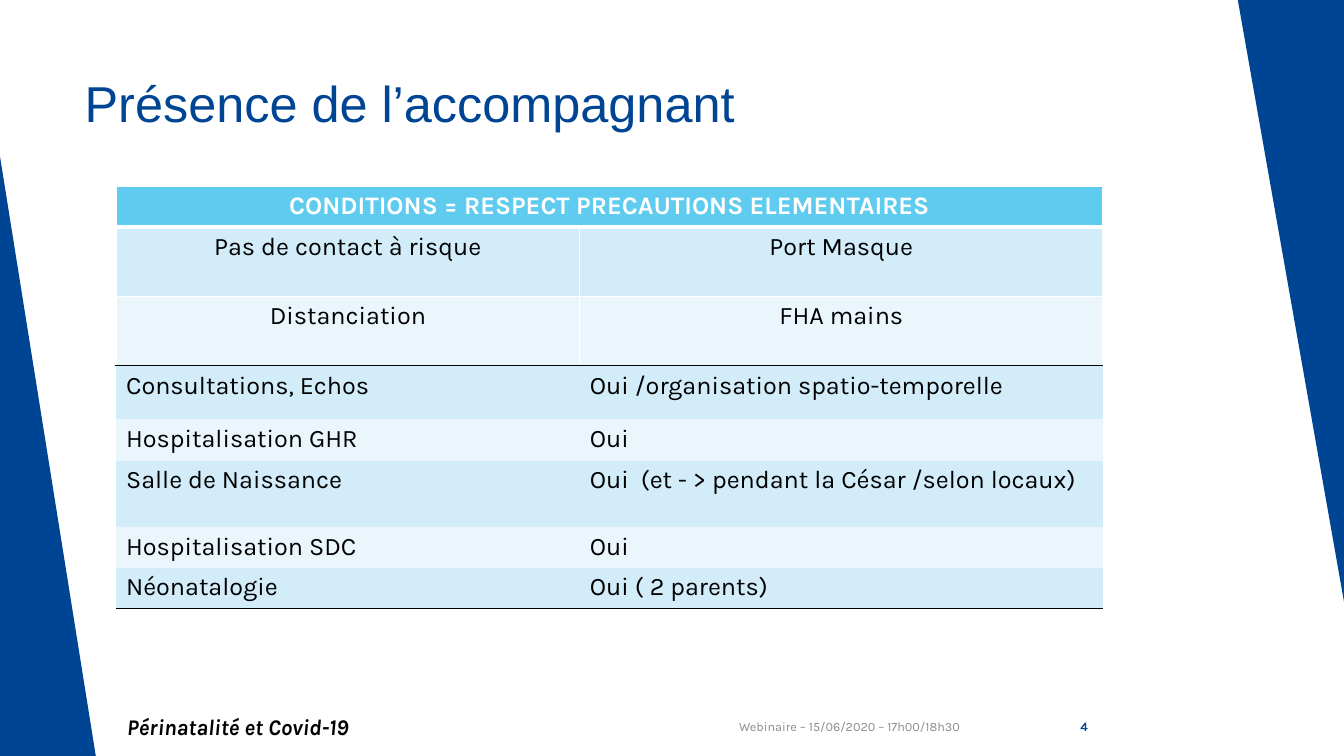
from dataclasses import dataclass

from lxml.etree import SubElement
from pptx import Presentation
from pptx.dml.color import RGBColor
from pptx.enum.shapes import MSO_SHAPE as Shape
from pptx.enum.text import MSO_ANCHOR as Anchor, PP_ALIGN as Align
from pptx.oxml.ns import qn
from pptx.util import Inches, Pt


@dataclass(frozen=True)
class Theme:
    """Colours, fonts and type sizes of the slide."""
    navy: str = "004494"
    sky: str = "5FCBEF"
    bands: tuple = ("EAF6FC", "D2ECF9")
    white: str = "FFFFFF"
    black: str = "000000"
    grey: str = "8C8C8C"
    heading_font: str = "Arial"
    body_font: str = "Karla"
    heading: int = 36
    body: int = 18
    event: int = 16
    small: int = 9


@dataclass(frozen=True)
class Box:
    """A region divided into 100 columns and 100 rows."""
    left: int
    top: int
    width: int
    height: int

    def region(self, column, row, columns, rows):
        """Return the region covering the given columns and rows."""
        return Box(int(self.left + self.width * column / 100),
                   int(self.top + self.height * row / 100),
                   int(self.width * columns / 100),
                   int(self.height * rows / 100))

    def frame(self):
        """Return left, top, width and height."""
        return self.left, self.top, self.width, self.height


THEME = Theme()
HEADER = "CONDITIONS = RESPECT PRECAUTIONS ELEMENTAIRES"
PRECAUTIONS = [
    ("Pas de contact à risque", "Port Masque"),
    ("Distanciation", "FHA mains"),
]
SERVICES = [
    ("Consultations, Echos", "Oui /organisation spatio-temporelle"),
    ("Hospitalisation GHR", "Oui"),
    ("Salle de Naissance", "Oui  (et - > pendant la César /selon locaux)"),
    ("Hospitalisation SDC", "Oui"),
    ("Néonatalogie", "Oui ( 2 parents)"),
]
COLUMN_SHARES = (47, 53)
ROW_SHARES = (9.55, 16.49, 16.49, 12.65, 9.8, 15.77, 9.67, 9.67)


def write_text(frame, text, size=THEME.body, color=THEME.black, font=THEME.body_font,
               bold=False, italic=False, align=Align.LEFT, anchor=Anchor.TOP):
    """Write one formatted paragraph into a text frame."""
    frame.word_wrap = True
    frame.vertical_anchor = anchor
    paragraph = frame.paragraphs[0]
    paragraph.alignment = align
    run = paragraph.add_run()
    run.text = text
    run.font.name, run.font.size = font, Pt(size)
    run.font.bold, run.font.italic = bold, italic
    run.font.color.rgb = RGBColor.from_string(color)


def set_border(cell, **sides):
    """Draw the sides L, R, T, B given as (colour, points), and clear the others."""
    properties = cell._tc.get_or_add_tcPr()
    for side in "LRTB":
        color, points = sides.get(side, (None, 0))
        line = SubElement(properties, qn(f"a:ln{side}"), w=str(Pt(points)))
        if color:
            fill = SubElement(line, qn("a:solidFill"))
            SubElement(fill, qn("a:srgbClr"), val=color)
        else:
            SubElement(line, qn("a:noFill"))


def add_side_bands(slide, box):
    """Place the two slanted bands on the edges of the box."""
    bands = [(box.region(0, 20.67, 7.13, 79.33), 0), (box.region(92.1, 0, 7.9, 79.6), 180)]
    for edge, rotation in bands:
        band = slide.shapes.add_shape(Shape.RIGHT_TRIANGLE, *edge.frame())
        band.rotation = rotation
        band.shadow.inherit = False
        band.fill.solid()
        band.fill.fore_color.rgb = RGBColor.from_string(THEME.navy)
        band.line.fill.background()


def add_title(slide, box):
    """Place the slide title in the box."""
    title = slide.shapes.title
    title.left, title.top, title.width, title.height = box.frame()
    write_text(title.text_frame, "Présence de l’accompagnant", size=THEME.heading,
               color=THEME.navy, font=THEME.heading_font)


def add_conditions_table(slide, box):
    """Fill the box with the precautions and the rule of each service."""
    rows = [(HEADER, ""), *PRECAUTIONS, *SERVICES]
    table = slide.shapes.add_table(len(rows), len(COLUMN_SHARES), *box.frame()).table
    table.first_row = table.horz_banding = False
    for column, share in zip(table.columns, COLUMN_SHARES):
        column.width = int(box.width * share / 100)
    for row, share in zip(table.rows, ROW_SHARES):
        row.height = int(box.height * share / 100)
    table.cell(0, 0).merge(table.cell(0, 1))

    thin, thick, rule = (THEME.white, 1), (THEME.white, 3), (THEME.black, 1)
    last_precaution, last_service = len(PRECAUTIONS), len(rows) - 1
    for index, row in enumerate(rows):
        is_header, is_service = index == 0, index > last_precaution
        sides = {} if is_service else dict(L=thin, R=thin, T=thin, B=thin)
        if is_header:
            sides["B"] = thick
        if index == 1:
            sides["T"] = thick
        if index in (last_precaution, last_service):
            sides["B"] = rule
        if index == last_precaution + 1:
            sides["T"] = rule
        for column, text in enumerate(row):
            cell = table.cell(index, column)
            set_border(cell, **sides)
            cell.fill.solid()
            fill = THEME.sky if is_header else THEME.bands[index % 2]
            cell.fill.fore_color.rgb = RGBColor.from_string(fill)
            if text:
                write_text(cell.text_frame, text, bold=is_header,
                           color=THEME.white if is_header else THEME.black,
                           align=Align.LEFT if is_service else Align.CENTER)


def add_footer(slide, box):
    """Place the event, the session and the page number along the box."""
    labels = [
        (8.7, 40.1, "Périnatalité et Covid-19",
         dict(size=THEME.event, bold=True, italic=True)),
        (52.65, 19.5, "Webinaire – 15/06/2020 – 17h00/18h30",
         dict(size=THEME.small, color=THEME.grey, align=Align.RIGHT)),
        (76.05, 5.63, "4",
         dict(size=THEME.small, color=THEME.navy, bold=True, align=Align.RIGHT)),
    ]
    for column, columns, text, text_format in labels:
        label = slide.shapes.add_textbox(*box.region(column, 0, columns, 100).frame())
        write_text(label.text_frame, text, anchor=Anchor.MIDDLE, **text_format)


def main():
    """Build the slide and save it."""
    deck = Presentation()
    deck.slide_width, deck.slide_height = Inches(13.33), Inches(7.5)
    page = Box(0, 0, deck.slide_width, deck.slide_height)
    slide = deck.slides.add_slide(deck.slide_layouts[5])
    add_side_bands(slide, page)
    add_title(slide, page.region(5.55, 8.93, 70.5, 19.2))
    add_conditions_table(slide, page.region(8.63, 24.67, 73.43, 55.8))
    add_footer(slide, page.region(0, 93.47, 100, 5.33))
    deck.save("out.pptx")


if __name__ == "__main__":
    main()
